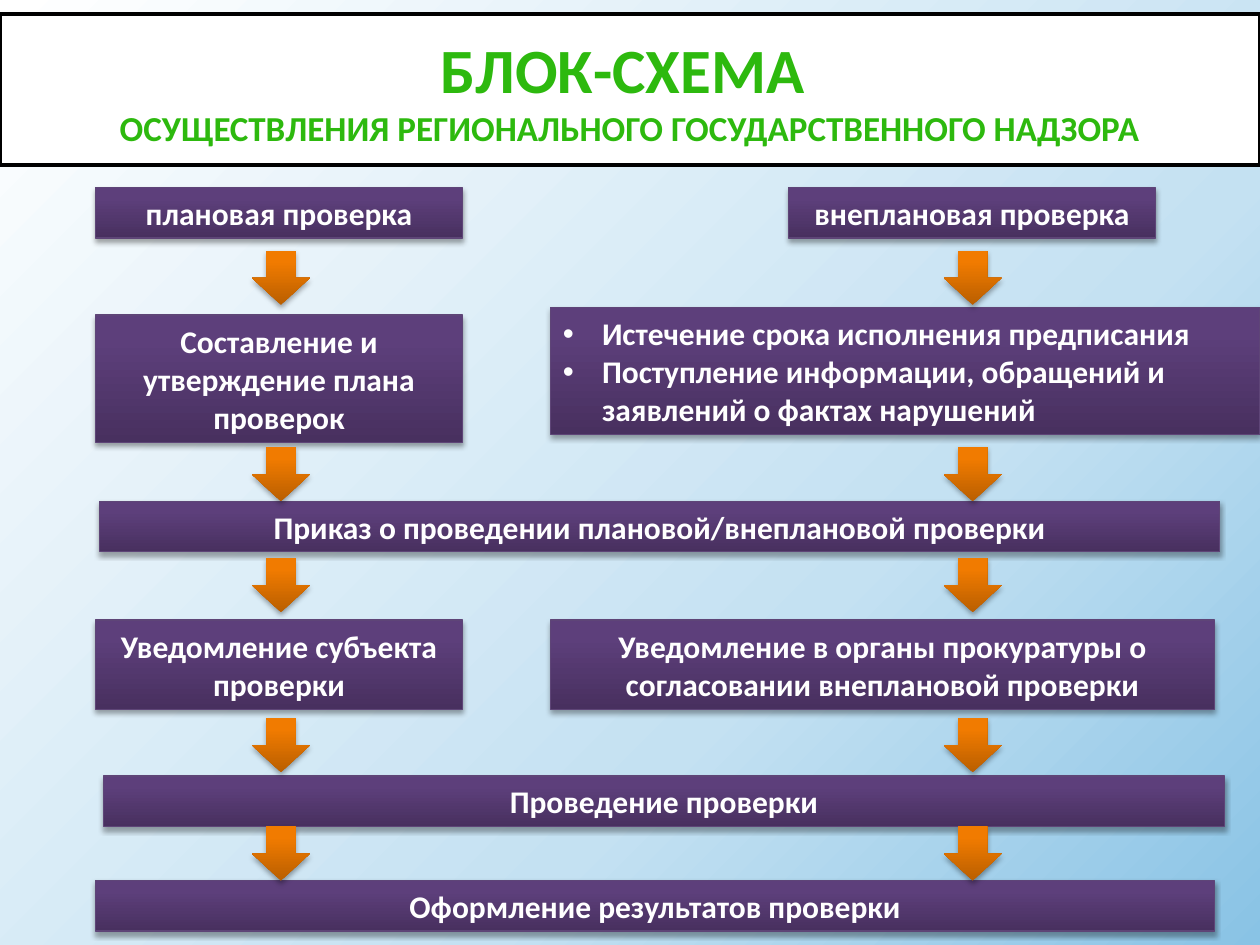
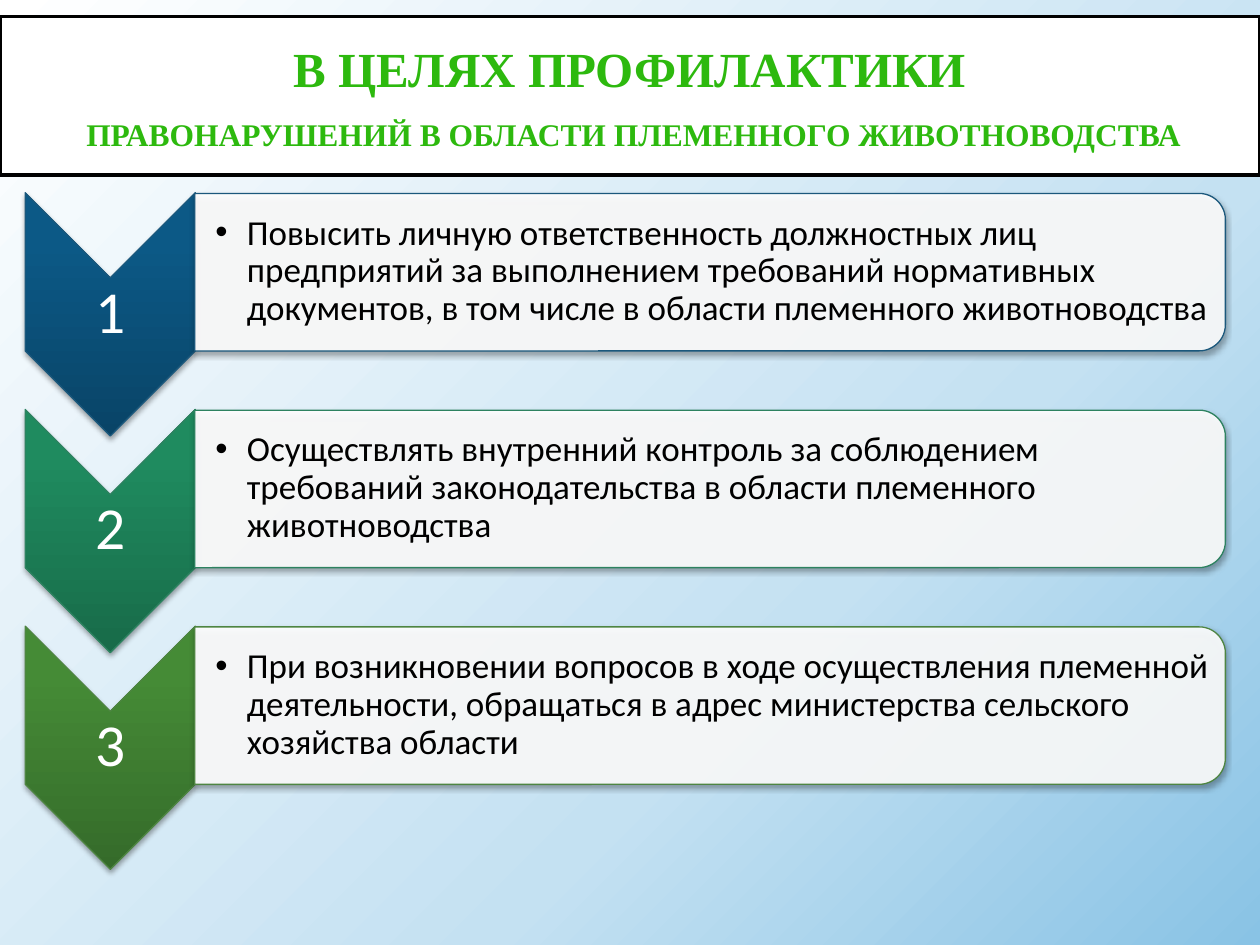
"""Builds two slides: an inspection flowchart and a list of prevention goals."""
import dataclasses
import itertools

import lxml.etree
import pptx
import pptx.dml.color
import pptx.enum.shapes
import pptx.enum.text
import pptx.oxml.ns
import pptx.util

Inches = pptx.util.Inches
Pt = pptx.util.Pt
Shape = pptx.enum.shapes.MSO_SHAPE
Align = pptx.enum.text.PP_ALIGN
Anchor = pptx.enum.text.MSO_ANCHOR
qn = pptx.oxml.ns.qn


@dataclasses.dataclass(frozen=True)
class Theme:
    white: str = "FFFFFF"
    black: str = "000000"
    title: str = "2DB90E"
    backdrop: tuple = ((0, "FFFFFF"), (65, "C4E1F2"), (100, "89C3E5"))
    step: tuple = ((0, "48305F"), (80, "5D3F7B"), (100, "5D3E7D"))
    step_line: str = "5E4577"
    arrow: tuple = ((0, "BA5F00"), (80, "F17B00"), (100, "F27C00"))
    goals: tuple = (
        (((0, "094467"), (80, "0C5986"), (100, "0A5A89")), "1B587C"),
        (((0, "186B49"), (80, "1F8B5F"), (100, "1D8D60")), "2D8260"),
        (((0, "356B2A"), (80, "458B36"), (100, "458D35")), "4E8542"),
    )
    font: str = "Calibri"
    serif: str = "Times New Roman"
    step_size: int = 18
    goal_size: int = 20
    number_size: int = 34


def add_xml(parent, tag, **attributes):
    names = {name: str(value) for name, value in attributes.items()}
    return lxml.etree.SubElement(parent, qn(tag), names)


def rgb(color):
    return pptx.dml.color.RGBColor.from_string(color)


class SlideBuilder:
    def __init__(self, theme):
        self.theme = theme
        self.deck = pptx.Presentation()
        self.deck.slide_width = Inches(10)
        self.deck.slide_height = Inches(7.5)
        self.page = None

    def new_page(self):
        self.page = self.deck.slides.add_slide(self.deck.slide_layouts[6])
        fill = self.page.background.fill
        gradient = self.gradient(fill, self.page.element, self.theme.backdrop)
        gradient.remove(gradient.find(qn("a:lin")))
        circle = add_xml(gradient, "a:path")
        circle.set("path", "circle")
        add_xml(circle, "a:fillToRect", r=100000, b=100000)

    def gradient(self, fill, owner, stops):
        fill.gradient()
        gradient = owner.find(".//" + qn("a:gradFill"))
        gradient.set("rotWithShape", "0")
        stop_list = gradient.find(qn("a:gsLst"))
        for stop in list(stop_list):
            stop_list.remove(stop)
        for position, color in stops:
            stop = add_xml(stop_list, "a:gs", pos=position * 1000)
            add_xml(stop, "a:srgbClr", val=color)
        gradient.find(qn("a:lin")).set("ang", "16200000")
        return gradient

    def shape(self, kind, place, fill, line=None, width=0.75, shadow=True):
        shape = self.page.shapes.add_shape(kind, *map(Inches, place))
        if isinstance(fill, str):
            shape.fill.solid()
            shape.fill.fore_color.rgb = rgb(fill)
        else:
            self.gradient(shape.fill, shape.element, fill)
        if line:
            shape.line.color.rgb = rgb(line)
            shape.line.width = Pt(width)
        else:
            shape.line.fill.background()
        shape.shadow.inherit = False
        if shadow:
            effects = shape.element.spPr.find(qn("a:effectLst"))
            outer = add_xml(effects, "a:outerShdw", blurRad=Pt(3.1), dist=Pt(1.8),
                            dir=5400000, rotWithShape=0)
            color = add_xml(outer, "a:srgbClr", val=self.theme.black)
            add_xml(color, "a:alpha", val=35000)
        return shape

    def format(self, para, size, color, bold=False, font=None, align=Align.CENTER):
        para.alignment = align
        for span in para.runs:
            span.font.name = font or self.theme.font
            span.font.size = Pt(size)
            span.font.bold = bold
            span.font.color.rgb = rgb(color)

    def bullet(self, para, indent):
        properties = para._p.get_or_add_pPr()
        properties.set("marL", str(Inches(indent)))
        properties.set("indent", str(-Inches(indent)))
        add_xml(properties, "a:buFont", typeface="Arial")
        add_xml(properties, "a:buChar", char="•")

    def title(self, top, height, lines, sizes, font, gap=0):
        band = self.shape(Shape.RECTANGLE, (0, top, 10, height), self.theme.white,
                          self.theme.black, width=2, shadow=False)
        band.text_frame.text = "\n".join(lines)
        for para, size in zip(band.text_frame.paragraphs, sizes):
            self.format(para, size, self.theme.title, True, font)
        band.text_frame.paragraphs[-1].space_before = Pt(gap)

    def step(self, place, text, bulleted=False):
        box = self.shape(Shape.RECTANGLE, place, self.theme.step, self.theme.step_line)
        box.text_frame.text = text
        for para in box.text_frame.paragraphs:
            align = Align.LEFT if bulleted else Align.CENTER
            self.format(para, self.theme.step_size, self.theme.white, True, align=align)
            if bulleted:
                self.bullet(para, 0.31)

    def arrow(self, left, top):
        self.shape(Shape.DOWN_ARROW, (left, top, 0.46, 0.43), self.theme.arrow)

    def label(self, place, text, size, color, margins, align):
        box = self.page.shapes.add_textbox(*map(Inches, place))
        frame = box.text_frame
        frame.word_wrap = True
        frame.vertical_anchor = Anchor.MIDDLE
        frame.margin_left = Inches(margins[0])
        frame.margin_top = frame.margin_right = frame.margin_bottom = Inches(margins[1])
        frame.text = text
        para = frame.paragraphs[0]
        self.format(para, size, color, align=align)
        para.line_spacing = 0.9
        return para

    def goal(self, number, offset, text, stops, line):
        theme = self.theme
        chevron = self.shape(Shape.CHEVRON, (-0.09, 1.82 + offset, 1.93, 1.35), stops, line)
        chevron.rotation = 90
        self.label((0.2, 2.2 + offset, 1.35, 0.58), str(number), theme.number_size,
                   theme.white, (0.02, 0.02), Align.CENTER)
        panel = self.shape(Shape.ROUND_2_SAME_RECTANGLE,
                           (5.01, -1.93 + offset, 1.25, 8.18), theme.white, line)
        panel.rotation = 90
        color = panel.element.spPr.find(qn("a:solidFill"))[0]
        add_xml(color, "a:alpha", val=90000)
        para = self.label((1.55, 1.59 + offset, 8.12, 1.13), text, theme.goal_size,
                          theme.black, (0.16, 0.01), Align.LEFT)
        self.bullet(para, 0.25)


def build_flowchart(builder):
    builder.new_page()
    builder.title(0.11, 1.2,
                  ("БЛОК-СХЕМА ", "ОСУЩЕСТВЛЕНИЯ РЕГИОНАЛЬНОГО ГОСУДАРСТВЕННОГО НАДЗОРА"),
                  (36, 20), builder.theme.font)
    steps = (
        ((0.76, 1.49, 2.91, 0.4), "плановая проверка"),
        ((6.26, 1.49, 2.91, 0.4), "внеплановая проверка"),
        ((0.79, 3.98, 8.89, 0.4), "Приказ о проведении плановой/внеплановой проверки"),
        ((0.76, 2.5, 2.91, 1.01), "Составление и утверждение плана проверок"),
        ((0.76, 4.92, 2.91, 0.71), "Уведомление субъекта проверки"),
        ((4.37, 4.92, 5.27, 0.71),
         "Уведомление в органы прокуратуры о согласовании внеплановой проверки"),
        ((0.82, 6.16, 8.9, 0.4), "Проведение проверки"),
        ((0.76, 6.99, 8.88, 0.4), "Оформление результатов проверки"),
    )
    for place, text in steps:
        builder.step(place, text)
    reasons = ("Истечение срока исполнения предписания",
               "Поступление информации, обращений и заявлений о фактах нарушений")
    builder.step((4.37, 2.44, 5.63, 1.01), "\n".join(reasons), bulleted=True)
    for top, left in itertools.product((1.99, 3.55, 4.43, 5.7, 6.56), (2, 7.49)):
        builder.arrow(left, top)


def build_goals(builder):
    builder.new_page()
    builder.title(0.13, 1.26,
                  ("В ЦЕЛЯХ ПРОФИЛАКТИКИ",
                   " ПРАВОНАРУШЕНИЙ В ОБЛАСТИ ПЛЕМЕННОГО ЖИВОТНОВОДСТВА"),
                  (28, 18), builder.theme.serif, gap=10)
    goals = (
        "Повысить личную ответственность должностных лиц предприятий за выполнением "
        "требований нормативных документов, в том числе в области племенного животноводства",
        "Осуществлять внутренний контроль за соблюдением требований законодательства "
        "в области племенного животноводства",
        "При возникновении вопросов в ходе осуществления племенной деятельности, "
        "обращаться в адрес министерства сельского хозяйства области",
    )
    pitch = 1.72
    for index, (text, colors) in enumerate(zip(goals, builder.theme.goals)):
        builder.goal(index + 1, index * pitch, text, *colors)


def main():
    builder = SlideBuilder(Theme())
    build_flowchart(builder)
    build_goals(builder)
    builder.deck.save("out.pptx")


if __name__ == "__main__":
    main()
